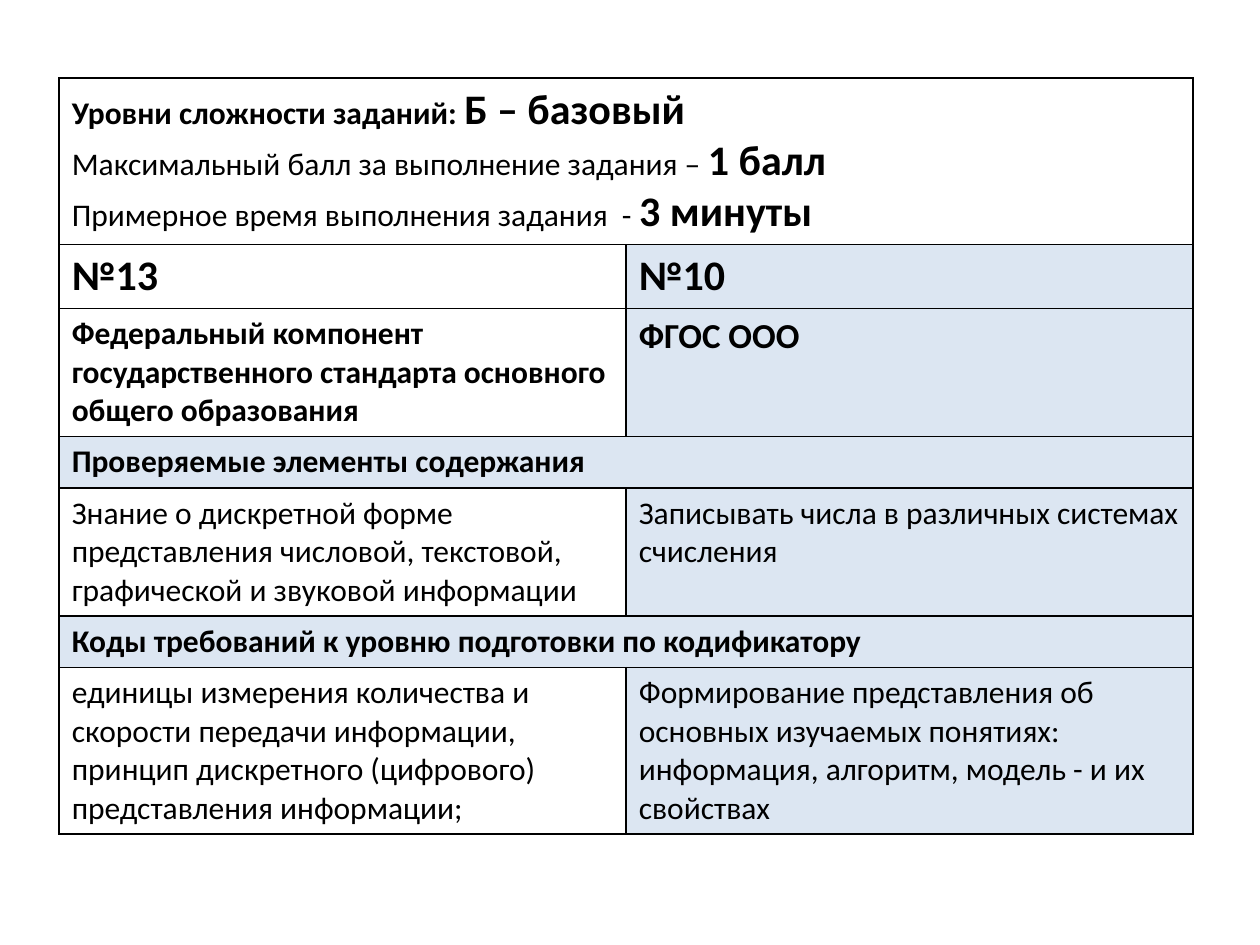
from lxml import etree
from pptx import Presentation
from pptx.dml.color import RGBColor
from pptx.oxml.ns import qn
from pptx.util import Inches, Pt

FONT = "Calibri"
BLACK = "000000"
PALE_BLUE = "DCE6F2"
BODY, SUBHEAD, LARGE = 18, 20, 24
ROW_HEIGHT = 0.41  # minimum; rows grow with their text
BORDER_WIDTH = 1

# A cell is a list of paragraphs, a paragraph a list of (text, size, bold) runs
SUMMARY = [
    [("Уровни сложности заданий: ", BODY, True), ("Б – базовый", LARGE, True)],
    [("Максимальный балл за выполнение задания – ", BODY, False),
     ("1 балл", LARGE, True)],
    [("Примерное время выполнения задания  - ", BODY, False),
     ("3 минуты", LARGE, True)],
]


def line(text, size=BODY, bold=False):
    return [[(text, size, bold)]]


# Rows with a single cell span both columns
COMPARISON = [
    [SUMMARY],
    [line("№13", LARGE, True), line("№10", LARGE, True)],
    [line("Федеральный компонент государственного стандарта основного "
          "общего образования", bold=True),
     line("ФГОС ООО", SUBHEAD, True)],
    [line("Проверяемые элементы содержания", bold=True)],
    [line("Знание о дискретной форме представления числовой, текстовой, "
          "графической и звуковой информации"),
     line("Записывать числа в различных системах счисления")],
    [line("Коды требований к уровню подготовки по кодификатору", bold=True)],
    [line("единицы измерения количества и скорости передачи информации, "
          "принцип дискретного (цифрового) представления информации;"),
     line("Формирование представления об основных изучаемых понятиях: "
          "информация, алгоритм, модель - и их свойствах")],
]


def rgb(value):
    return RGBColor.from_string(value)


def add_borders(cell):
    properties = cell._tc.get_or_add_tcPr()
    for side in ("lnL", "lnR", "lnT", "lnB"):
        border = etree.SubElement(properties, qn("a:" + side),
                                  w=str(Pt(BORDER_WIDTH)))
        fill = etree.SubElement(border, qn("a:solidFill"))
        etree.SubElement(fill, qn("a:srgbClr"), val=BLACK)


def fill_cell(cell, color):
    if color:
        cell.fill.solid()
        cell.fill.fore_color.rgb = rgb(color)
    else:
        cell.fill.background()


def write_cell(cell, paragraphs):
    frame = cell.text_frame
    for index, runs in enumerate(paragraphs):
        paragraph = frame.add_paragraph() if index else frame.paragraphs[0]
        for text, size, bold in runs:
            run = paragraph.add_run()
            run.text = text
            run.font.name = FONT
            run.font.size = Pt(size)
            run.font.bold = bold
            run.font.color.rgb = rgb(BLACK)


def add_comparison(slide, left, top, width, height):
    frame = slide.shapes.add_table(len(COMPARISON), 2, left, top, width, height)
    table = frame.table
    table.first_row = table.horz_banding = False

    for row_index, contents in enumerate(COMPARISON):
        table.rows[row_index].height = Inches(ROW_HEIGHT)
        spans = len(contents) == 1

        # Section bands and the right-hand column are tinted
        for column in range(2):
            cell = table.cell(row_index, column)
            add_borders(cell)
            tinted = row_index > 0 and (spans or column == 1)
            fill_cell(cell, PALE_BLUE if tinted else None)

        if spans:
            table.cell(row_index, 0).merge(table.cell(row_index, 1))
        for column, paragraphs in enumerate(contents):
            write_cell(table.cell(row_index, column), paragraphs)

    frame.height = height


def main():
    deck = Presentation()
    deck.slide_width, deck.slide_height = Inches(10), Inches(7.5)
    slide = deck.slides.add_slide(deck.slide_layouts[6])
    add_comparison(slide, Inches(0.47), Inches(0.62), Inches(9), Inches(5.91))
    deck.save("out.pptx")


if __name__ == "__main__":
    main()
